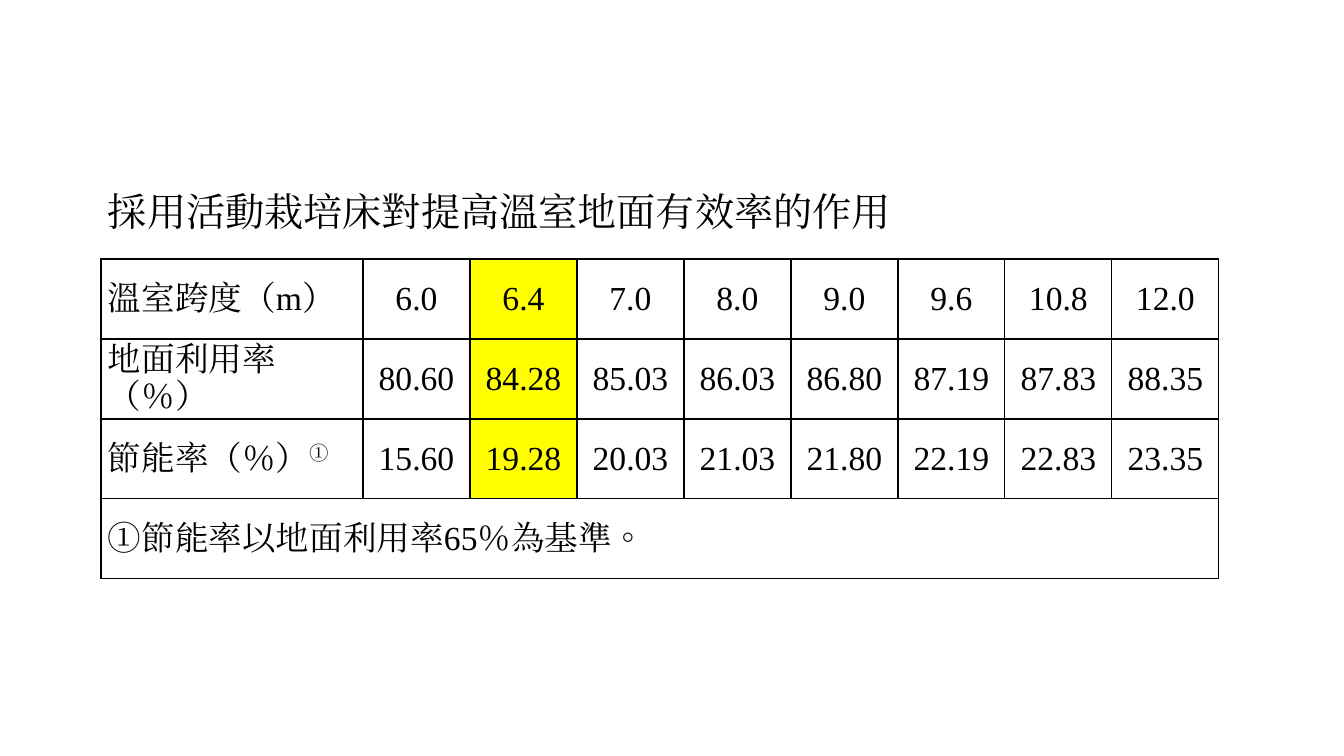
from lxml import etree
from pptx import Presentation
from pptx.dml.color import RGBColor
from pptx.enum.text import MSO_ANCHOR, PP_ALIGN
from pptx.oxml.ns import qn
from pptx.util import Pt

EMU_PER_PX = 914400 / 100.8
LEFT, CENTER = PP_ALIGN.LEFT, PP_ALIGN.CENTER
MIDDLE = MSO_ANCHOR.MIDDLE
FONT = "Times New Roman"
COLORS = {"ink": "000000", "highlight": "FFFF00"}

TITLE = "採用活動栽培床對提高溫室地面有效率的作用"
FOOTNOTE = "①節能率以地面利用率65％為基準。"
MEASURES = [
    ("溫室跨度（m）", "", "6.0 6.4 7.0 8.0 9.0 9.6 10.8 12.0"),
    ("地面利用率（％）", "", "80.60 84.28 85.03 86.03 86.80 87.19 87.83 88.35"),
    ("節能率（％）", "①", "15.60 19.28 20.03 21.03 21.80 22.19 22.83 23.35"),
]
HIGHLIGHT_COLUMN = 2
COLUMN_WIDTHS = [262] + [107] * 8
ROW_HEIGHTS = [91] + [80] * 4


def px(length):
    """Turn whole pixels into EMU."""
    return round(length * EMU_PER_PX)


def write(paragraph, text, size=24, color="ink", align=LEFT, raised=False):
    """Add a formatted run to a paragraph."""
    paragraph.alignment = align
    run = paragraph.add_run()
    run.text = text
    run.font.size = Pt(size)
    run.font.color.rgb = RGBColor.from_string(COLORS[color])
    run.font.name = FONT
    properties = run.font._element
    properties.set("lang", "zh-TW")
    if raised:
        properties.set("baseline", "30000")
    etree.SubElement(properties, qn("a:ea"), typeface=FONT)


class TableSlide:
    """Hold the slide and draw a ruled table on it."""

    def __init__(self, slide):
        self.slide = slide

    def table(self, left, top, widths, heights):
        """Add a plain table with the given column and row sizes."""
        frame = self.slide.shapes.add_table(
            len(heights), len(widths), px(left), px(top), px(sum(widths)), px(sum(heights))
        )
        table = frame.table
        table.first_row = table.horz_banding = False
        for column, width in zip(table.columns, widths):
            column.width = px(width)
        for row, height in zip(table.rows, heights):
            row.height = px(height)
        return table

    def cell(self, cell, fill=None, sides="LRTB"):
        """Set margins, fill and the ruled sides of a cell."""
        cell.margin_left = cell.margin_right = px(7)
        cell.margin_top = cell.margin_bottom = 0
        cell.vertical_anchor = MIDDLE
        if fill:
            cell.fill.solid()
            cell.fill.fore_color.rgb = RGBColor.from_string(COLORS[fill])
        else:
            cell.fill.background()
        properties = cell._tc.get_or_add_tcPr()
        for position, side in enumerate("LRTB"):
            border = etree.Element(qn(f"a:ln{side}"), w=str(Pt(1)))
            if side in sides:
                paint = etree.SubElement(border, qn("a:solidFill"))
                etree.SubElement(paint, qn("a:srgbClr"), val=COLORS["ink"])
            else:
                etree.SubElement(border, qn("a:noFill"))
            properties.insert(position, border)

    def banner(self, row, text, size=24, sides="LRTB"):
        """Write one text across a whole row."""
        cells = list(row.cells)
        for cell in cells:
            self.cell(cell, sides=sides)
        cells[0].merge(cells[-1])
        write(cells[0].text_frame.paragraphs[0], text, size=size)

    def measure(self, row, label, mark, values):
        """Write a label with its values."""
        for index, (cell, text) in enumerate(zip(row.cells, [label] + values)):
            self.cell(cell, fill="highlight" if index == HIGHLIGHT_COLUMN else None)
            paragraph = cell.text_frame.paragraphs[0]
            write(paragraph, text, align=CENTER if index else LEFT)
            if mark and index == 0:
                write(paragraph, mark, raised=True)


def main():
    """Build and save the slide."""
    deck = Presentation()
    deck.slide_width, deck.slide_height = px(1344), px(756)
    page = TableSlide(deck.slides.add_slide(deck.slide_layouts[6]))
    greenhouse = page.table(101, 168, COLUMN_WIDTHS, ROW_HEIGHTS)
    rows = list(greenhouse.rows)
    page.banner(rows[0], TITLE, size=28, sides="B")
    for row, (label, mark, values) in zip(rows[1:], MEASURES):
        page.measure(row, label, mark, values.split())
    page.banner(rows[-1], FOOTNOTE)
    deck.save("out.pptx")


if __name__ == "__main__":
    main()
